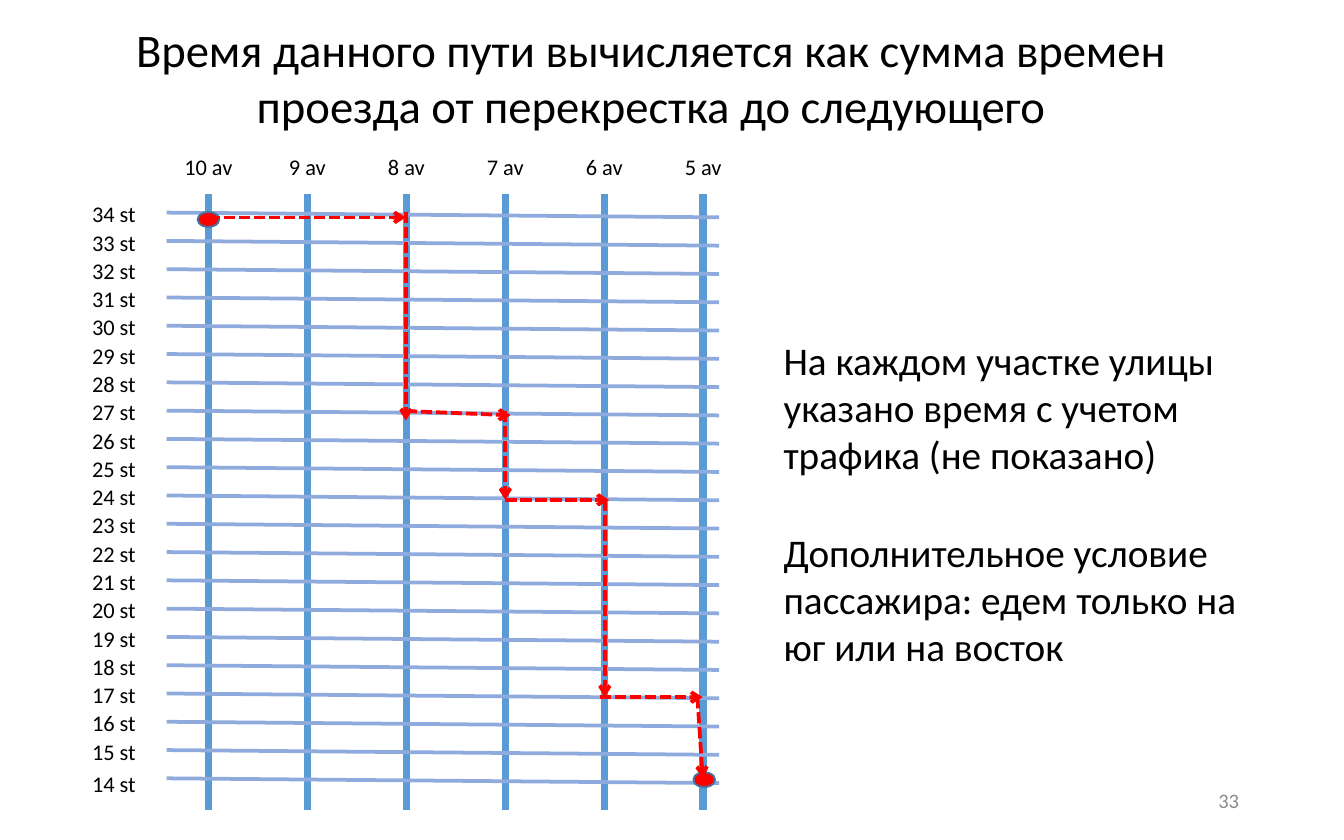
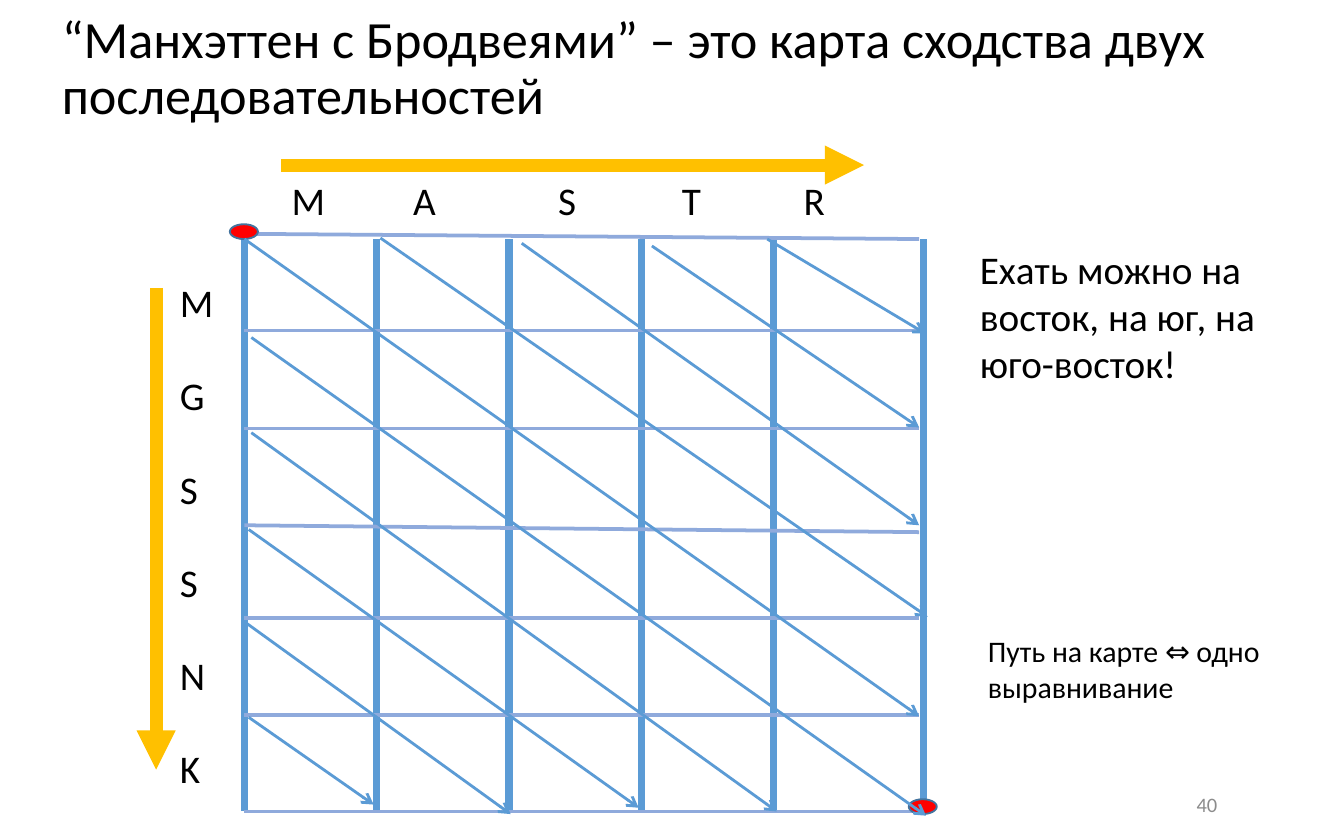
import pptx
import pptx.dml.color
import pptx.enum.dml
import pptx.enum.shapes
import pptx.enum.text
import pptx.oxml
import pptx.oxml.ns
import pptx.util
from pptx.util import Cm

# Shared style
FONT = "Calibri"
BLACK, GREY, RED = "000000", "8C8C8C", "FF0000"
AVENUE, STREET, DOT_EDGE, GOLD = "5B9BD5", "8FAADC", "43739E", "FFC000"
ALIGN = pptx.enum.text.PP_ALIGN
MIDDLE = pptx.enum.text.MSO_ANCHOR.MIDDLE
DASH = pptx.enum.dml.MSO_LINE.SQUARE_DOT
NARROW_INSETS, LABEL_INSETS = (0.23, 0.11), (0.25, 0.13)

# Street map, in centimetres
AVENUES = range(10, 4, -1)
AVENUE_LEFT, AVENUE_GAP = 3.94, 1.87
STREETS = range(34, 13, -1)
STREET_TOP, STREET_GAP = 4.02, 0.53475
ROUTE = [
    (11.33, 13.18, 13.28, 13.18), (13.18, 13.18, 13.28, 14.71),
    (9.55, 9.45, 11.51, 9.45), (11.43, 9.45, 11.43, 13.18),
    (9.55, 7.77, 9.55, 9.45), (7.67, 7.77, 9.65, 7.85),
    (7.67, 4.01, 7.67, 7.95), (3.94, 4.11, 7.67, 4.11),
]

# Similarity map, in centimetres
GRID_LEFT, GRID_TOP, GRID_BOTTOM, GRID_RIGHT = 4.62, 4.52, 15.34, 17.37
COLUMN_GAP = 2.5
ROW_ENDS = [(15.34, 15.34), (13.51, 13.51), (11.68, 11.68), (9.93, 10.06),
            (8.1, 8.1), (6.25, 6.25), (4.42, 4.52)]
DIAGONALS = [
    (4.62, 4.52, 17.37, 13.54), (4.75, 6.38, 17.5, 15.42),
    (4.75, 8.18, 14.68, 15.34), (4.7, 10.01, 12.07, 15.27),
    (9.86, 4.6, 17.37, 9.93), (4.67, 11.79, 9.65, 15.39),
    (12.32, 4.65, 17.37, 8.08), (14.5, 4.52, 17.48, 6.3),
    (4.7, 13.56, 7.06, 15.21), (7.19, 4.5, 17.53, 11.66),
]


def color(value):
    return pptx.dml.color.RGBColor.from_string(value)


def add_child(parent, tag, **attributes):
    child = pptx.oxml.parse_xml(f"<a:{tag} {pptx.oxml.ns.nsdecls('a')}/>")
    for name, value in attributes.items():
        child.set(name, str(value))
    parent.append(child)
    return child


def add_text(page, text, left, top, width, height, *, size=21, ink=BLACK,
             align=ALIGN.LEFT, anchor=None, insets=NARROW_INSETS, wrap=True,
             grow=True, line_spacing=None, gap=0, tabs=()):
    """Write one paragraph per line of text; gap is the points between them."""
    box = page.shapes.add_textbox(Cm(left), Cm(top), Cm(width), Cm(height))
    frame = box.text_frame
    frame.word_wrap = wrap
    frame.margin_left = frame.margin_right = Cm(insets[0])
    frame.margin_top = frame.margin_bottom = Cm(insets[1])
    fit = pptx.enum.text.MSO_AUTO_SIZE
    frame.auto_size = fit.SHAPE_TO_FIT_TEXT if grow else fit.NONE
    if anchor is not None:
        frame.vertical_anchor = anchor
    for index, line in enumerate(text.split("\n")):
        para = frame.add_paragraph() if index else frame.paragraphs[0]
        para.alignment = align
        if line_spacing:
            para.line_spacing = line_spacing
        if index and gap:
            para.space_before = pptx.util.Pt(gap)
        if tabs:
            stops = add_child(para._p.get_or_add_pPr(), "tabLst")
            for stop in tabs:
                add_child(stops, "tab", pos=Cm(stop), algn="l")
        span = para.add_run()
        span.text = line
        span.font.name = FONT
        span.font.size = pptx.util.Pt(size)
        span.font.color.rgb = color(ink)


def add_line(page, x1, y1, x2, y2, ink, width, head=None, dash=None):
    line = page.shapes.add_connector(
        pptx.enum.shapes.MSO_CONNECTOR.STRAIGHT, Cm(x1), Cm(y1), Cm(x2), Cm(y2))
    line.line.color.rgb = color(ink)
    line.line.width = pptx.util.Pt(width)
    if dash:
        line.line.dash_style = dash
    if head:
        add_child(line.line._get_or_add_ln(), "tailEnd", type=head)
    add_child(line._element.spPr, "effectLst")


def add_dot(page, x, y, width):
    height = 0.28
    dot = page.shapes.add_shape(
        pptx.enum.shapes.MSO_SHAPE.OVAL,
        Cm(x - width / 2), Cm(y - height / 2), Cm(width), Cm(height))
    dot.shadow.inherit = False
    dot.fill.solid()
    dot.fill.fore_color.rgb = color(RED)
    dot.line.color.rgb = color(DOT_EDGE)
    dot.line.width = pptx.util.Pt(1)


def add_page_number(page, number, left, top, width):
    add_text(page, str(number), left, top, width, 0.84, size=11, ink=GREY,
             align=ALIGN.RIGHT, anchor=MIDDLE, grow=False)


def build_route_page(page):
    # Avenues and streets
    avenue_places = [AVENUE_LEFT + AVENUE_GAP * i for i in range(len(AVENUES))]
    street_places = [STREET_TOP + STREET_GAP * i for i in range(len(STREETS))]
    for x in avenue_places:
        add_line(page, x, 3.66, x, 15.32, AVENUE, 4)
    for y in street_places:
        add_line(page, 3.15, y, 13.59, y + 0.09, STREET, 2)

    # Names of the avenues and streets
    label = dict(size=12, insets=LABEL_INSETS, wrap=False)
    for street, y in zip(STREETS, street_places):
        drop = 0.08 if street == STREETS[-1] else 0
        add_text(page, f"{street} st", 1.49, y - 0.36 + drop, 1.35, 0.76, **label)
    for avenue, x in zip(AVENUES, avenue_places):
        width = 1.45 if avenue == 10 else 1.22
        add_text(page, f"{avenue} av", x - width / 2, 2.77, width, 0.76,
                 align=ALIGN.CENTER, **label)

    # Route with its start and finish
    add_dot(page, 3.94, 4.15, 0.41)
    add_dot(page, 13.31, 14.74, 0.41)
    for leg in ROUTE:
        add_line(page, *leg, RED, 2, head="arrow", dash=DASH)

    # Title and notes
    add_text(page, "Время данного пути вычисляется как сумма времен проезда "
             "от перекрестка до следующего", 0.97, 0.28, 22.66, 2.36,
             size=25, align=ALIGN.CENTER)
    add_text(page, "На каждом участке улицы указано время с учетом трафика "
             "(не показано)", 14.58, 6.25, 9.17, 2.92)
    add_text(page, "Дополнительное условие пассажира: едем только на юг "
             "или на восток", 14.58, 9.88, 9.17, 2.92)
    add_page_number(page, 33, 17.93, 14.71, 5.72)


def build_similarity_page(page):
    add_text(page, "“Манхэттен с Бродвеями” – это карта сходства двух "
             "последовательностей", 0.94, 0, 23.67, 2.64, size=28,
             anchor=MIDDLE, grow=False, line_spacing=0.9)
    add_page_number(page, 40, 17.78, 14.78, 5.46)

    # Grid
    for column in range(5):
        x = GRID_LEFT + COLUMN_GAP * column
        add_line(page, x, GRID_TOP, x, GRID_BOTTOM, AVENUE, 4)
    add_line(page, 17.45, GRID_TOP, 17.45, 15.11, AVENUE, 4)
    for start, end in ROW_ENDS:
        add_line(page, GRID_LEFT, start, GRID_RIGHT, end, STREET, 2)
    add_dot(page, 4.61, 4.38, 0.53)
    add_dot(page, 17.44, 15.25, 0.53)

    # The two sequences
    add_text(page, "\t".join("MASTR"), 5.26, 3.2, 10.82, 1.14,
             insets=LABEL_INSETS, tabs=(2.3, 5.04, 7.38, 9.68))
    add_text(page, "\n".join("MGSSNK"), 3.15, 5.13, 1.22, 10.39,
             insets=LABEL_INSETS, gap=24.8)

    # Diagonal moves and reading directions
    for diagonal in DIAGONALS:
        add_line(page, *diagonal, AVENUE, 1.5, head="arrow")
    add_line(page, 2.95, 5.44, 2.95, 14.55, GOLD, 7, head="triangle")
    add_line(page, 5.31, 3.12, 16.33, 3.12, GOLD, 7, head="triangle")

    # Notes
    add_text(page, "Путь на карте ⇔ одно\nвыравнивание", 18.44, 11.86, 5.92, 1.6,
             size=16, wrap=False)
    add_text(page, "Ехать можно на восток, на юг, на юго-восток!",
             18.29, 4.52, 6.38, 2.92)


def main():
    deck = pptx.Presentation()
    deck.slide_width, deck.slide_height = Cm(25.4), Cm(15.88)
    blank = deck.slide_layouts[6]
    for build in (build_route_page, build_similarity_page):
        build(deck.slides.add_slide(blank))
    deck.save("out.pptx")


if __name__ == "__main__":
    main()
